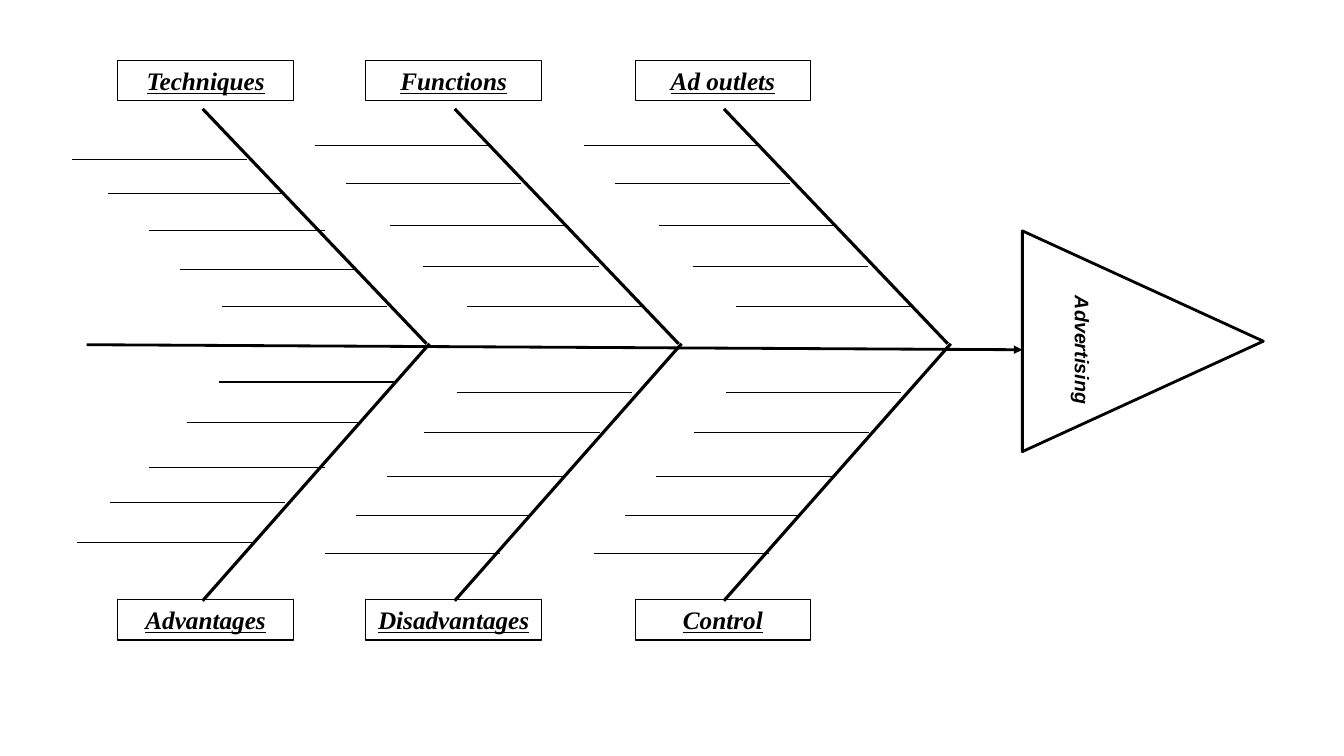
from lxml.etree import SubElement
from pptx import Presentation
from pptx.dml.color import RGBColor
from pptx.enum.shapes import MSO_CONNECTOR as CONNECTOR, MSO_SHAPE as SHAPE
from pptx.enum.text import MSO_ANCHOR as ANCHOR, MSO_AUTO_SIZE as AUTO_SIZE, PP_ALIGN as ALIGN
from pptx.oxml.ns import qn
from pptx.util import Emu, Pt

EMU_PER_PX = 9144
BLACK, WHITE = "000000", "FFFFFF"
LABEL_W, LABEL_H, LABEL_GAP, RIB_W = 174, 40, 535, 174

FIRST_RIBS = [(-46, 98, RIB_W), (-10, 132, RIB_W), (31, 169, RIB_W), (62, 207, RIB_W), (103, 244, 164),
              (100, 319, RIB_W), (68, 359, RIB_W), (31, 404, RIB_W), (-8, 439, RIB_W), (-41, 478, RIB_W)]
OTHER_RIBS = [(x, y, RIB_W) for x, y in [
    (-51, 84), (-20, 122), (24, 164), (57, 204), (100, 244),
    (90, 329), (58, 369), (21, 413), (-10, 451), (-41, 489)]]
CATEGORY_PAIRS = [
    (117, 84, "Techniques", "Advantages", FIRST_RIBS),
    (363, 88, "Functions", "Disadvantages", OTHER_RIBS),
    (630, 88, "Ad outlets", "Control", OTHER_RIBS),
]


def px(length):
    """Turn px into EMU."""
    return Emu(length * EMU_PER_PX)


def color(hex_code):
    """Turn a hex string into a colour."""
    return RGBColor.from_string(hex_code)


def outline(line, weight):
    """Draw a line in black at the given point weight."""
    line.color.rgb = color(BLACK)
    line.width = Pt(weight)


def add_line(slide, start, end, weight, arrow=False):
    """Draw a straight line, with an arrowhead at its end on request."""
    stroke = slide.shapes.add_connector(CONNECTOR.STRAIGHT, *map(px, start + end))
    outline(stroke.line, weight)
    if arrow:
        SubElement(stroke.line._get_or_add_ln(), qn("a:tailEnd"), type="triangle")
    SubElement(stroke._element.spPr, qn("a:effectLst"))


def write(frame, text, font_name, size, align):
    """Write one bold italic run and return its font."""
    paragraph = frame.paragraphs[0]
    paragraph.alignment = align
    run = paragraph.add_run()
    run.text = text
    font = run.font
    font.name, font.size = font_name, Pt(size)
    font.bold = font.italic = True
    font.color.rgb = color(BLACK)
    return font


def add_label(slide, left, top, text):
    """Draw a framed category label."""
    label = slide.shapes.add_textbox(px(left), px(top), px(LABEL_W), px(LABEL_H))
    outline(label.line, 0.75)
    label.text_frame.word_wrap = True
    label.text_frame.auto_size = AUTO_SIZE.SHAPE_TO_FIT_TEXT
    write(label.text_frame, text, "Times New Roman", 18, ALIGN.CENTER).underline = True


def add_category_pair(slide, left, top, bone_x, upper, lower, ribs):
    """Draw two facing bones with their labels and ribs."""
    bone_left = left + bone_x
    add_line(slide, (bone_left, top + 48), (bone_left + 222, top + 281), 2.25)
    add_line(slide, (bone_left + 225, top + 281), (bone_left, top + 536), 2.25)
    for x, y, width in ribs:
        add_line(slide, (left + x, top + y), (left + x + width, top + y), 0.75)
    add_label(slide, left, top, upper)
    add_label(slide, left, top + LABEL_GAP, lower)


def add_head(slide, left, top, width, height, topic):
    """Draw the triangular head, turned to point right."""
    head = slide.shapes.add_shape(SHAPE.ISOSCELES_TRIANGLE, *map(px, (left, top, width, height)))
    head.rotation = 90
    head.shadow.inherit = False
    head.fill.solid()
    head.fill.fore_color.rgb = color(WHITE)
    outline(head.line, 2)
    head.text_frame.word_wrap = False
    head.text_frame.vertical_anchor = ANCHOR.MIDDLE
    write(head.text_frame, topic, "Arial", 14, ALIGN.LEFT)


def main():
    """Build the fishbone slide."""
    deck = Presentation()
    deck.slide_width, deck.slide_height = px(1333), px(750)
    slide = deck.slides.add_slide(deck.slide_layouts[6])
    add_head(slide, 1024, 219, 219, 239, "Advertising")
    add_line(slide, (86, 342), (1014, 347), 2, arrow=True)
    for left, bone_x, upper, lower, ribs in CATEGORY_PAIRS:
        add_category_pair(slide, left, 60, bone_x, upper, lower, ribs)
    deck.save("out.pptx")


if __name__ == "__main__":
    main()
